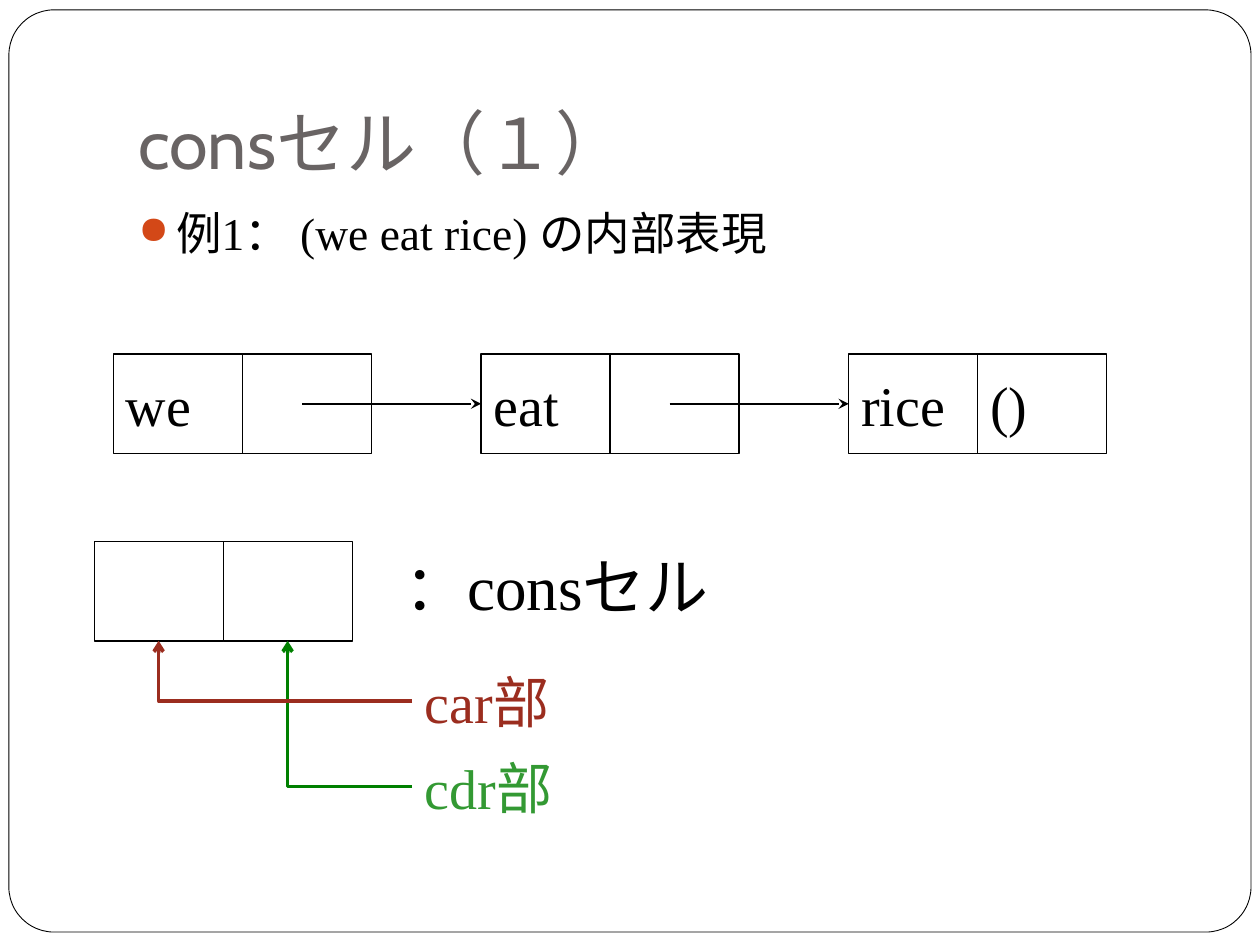
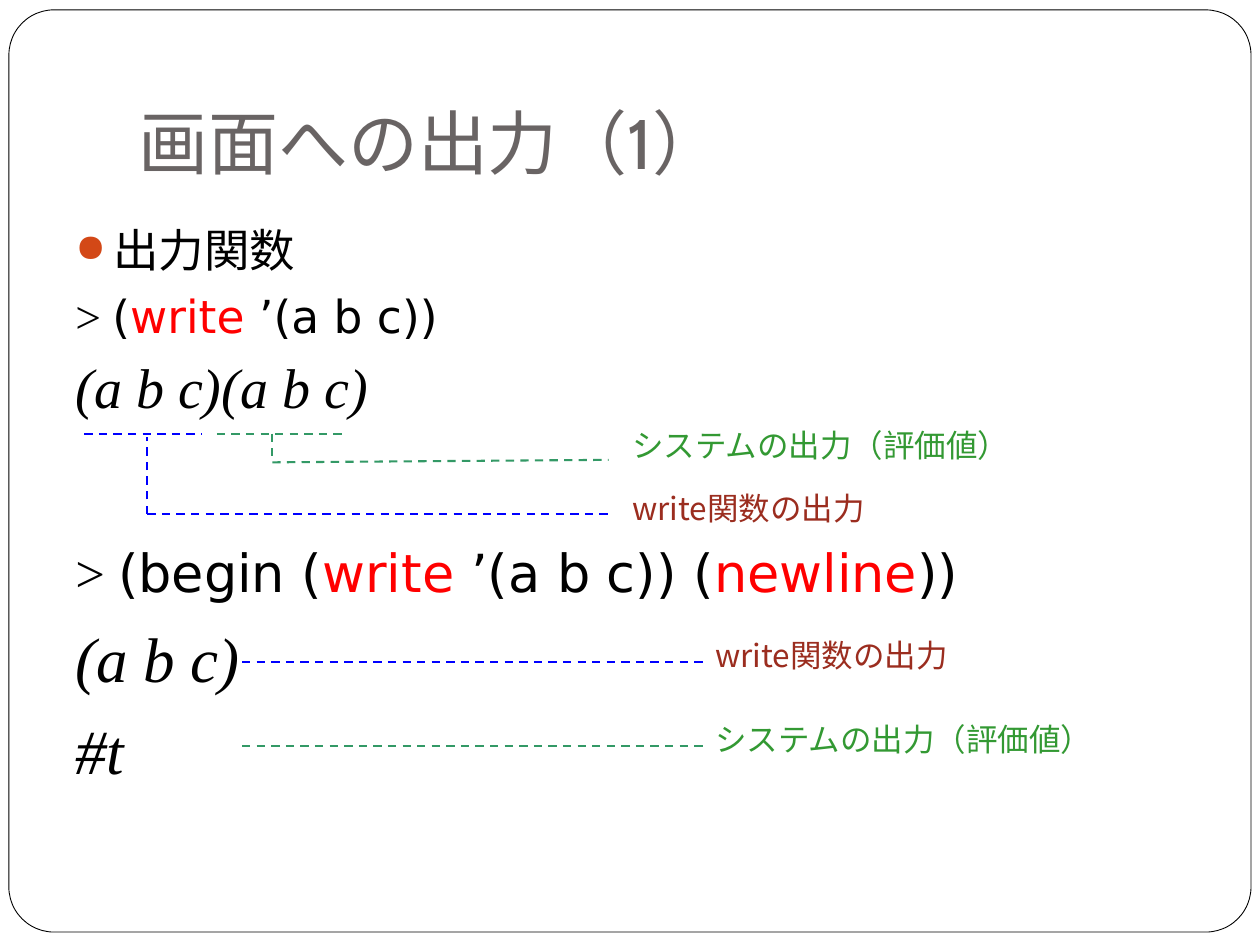
"""Build two Lisp lecture slides: cons cells and screen output."""
from dataclasses import dataclass

from lxml.etree import SubElement
from pptx import Presentation
from pptx.dml.color import RGBColor
from pptx.enum.dml import MSO_LINE
from pptx.enum.shapes import MSO_CONNECTOR, MSO_SHAPE
from pptx.enum.text import MSO_ANCHOR, MSO_AUTO_SIZE, PP_ALIGN
from pptx.oxml.ns import qn
from pptx.shapes.autoshape import Shape
from pptx.shapes.connector import Connector
from pptx.slide import Slide
from pptx.text.text import TextFrame
from pptx.util import Cm, Pt

COLORS = {
    "ink": "000000", "paper": "FFFFFF", "title": "696464", "bullet": "D34817",
    "car": "9B2D1F", "cdr": "339933", "cdr_arrow": "008000",
    "keyword": "FF0000", "written": "0000FF", "returned": "339966",
}
SERIF, CODE, GOTHIC, HEADING = "Times New Roman", "DejaVu Sans", "Noto Sans CJK JP", "Cabin"
CELL_WIDTH, CELL_HEIGHT = 2.6, 2.0
HANG = 0.76


@dataclass(frozen=True)
class Box:
    left: float
    top: float
    width: float
    height: float

    def emu(self) -> tuple[Cm, ...]:
        return tuple(Cm(v) for v in (self.left, self.top, self.width, self.height))


@dataclass(frozen=True)
class Trace:
    start: tuple[float, float]
    end: tuple[float, float]
    color: str


@dataclass(frozen=True)
class Caption:
    text: str
    box: Box
    color: str


def rgb(name: str) -> RGBColor:
    return RGBColor.from_string(COLORS[name])


def write(frame: TextFrame, text: str, *, size: float, font: str = SERIF,
          color: str = "ink", italic: bool = False) -> None:
    run = frame.paragraphs[-1].add_run()
    run.text = text
    run.font.name = font
    run.font.size = Pt(size)
    run.font.italic = italic
    run.font.color.rgb = rgb(color)
    SubElement(run.font._element, qn("a:ea"), typeface=GOTHIC)


def start_paragraph(frame: TextFrame, *, before: float = 0, spacing: float = 1,
                    hanging: bool = False, bullet: bool = False) -> None:
    paragraph = frame.paragraphs[-1]
    if paragraph.runs:
        paragraph = frame.add_paragraph()
    paragraph.space_before = Pt(before)
    paragraph.line_spacing = spacing
    properties = paragraph._p.get_or_add_pPr()
    if hanging:
        properties.set("marL", str(Cm(HANG)))
        properties.set("indent", str(-Cm(HANG)))
    if bullet:
        tint = SubElement(properties, qn("a:buClr"))
        SubElement(tint, qn("a:srgbClr"), val=COLORS["bullet"])
        SubElement(properties, qn("a:buSzPct"), val="85000")
        SubElement(properties, qn("a:buChar"), char="●")


def add_text_area(slide: Slide, box: Box, grow: bool = False) -> Shape:
    area = slide.shapes.add_textbox(*box.emu())
    area.text_frame.word_wrap = True
    area.text_frame.auto_size = MSO_AUTO_SIZE.SHAPE_TO_FIT_TEXT if grow else MSO_AUTO_SIZE.NONE
    return area


def add_label(slide: Slide, caption: Caption, size: float, font: str = SERIF) -> Shape:
    label = add_text_area(slide, caption.box, grow=True)
    write(label.text_frame, caption.text, size=size, font=font, color=caption.color)
    return label


def add_outline(slide: Slide, preset: MSO_SHAPE, box: Box, weight: float) -> Shape:
    outline = slide.shapes.add_shape(preset, *box.emu())
    outline.shadow.inherit = False
    outline.fill.background()
    outline.line.color.rgb = rgb("ink")
    outline.line.width = Pt(weight)
    return outline


def start_slide(deck: Presentation, heading: str) -> Slide:
    slide = deck.slides.add_slide(deck.slide_layouts[6])
    border = add_outline(slide, MSO_SHAPE.ROUNDED_RECTANGLE, Box(0.18, 0.2, 25.04, 18.59), 0.5)
    border.adjustments[0] = 0.049
    border.fill.solid()
    border.fill.fore_color.rgb = rgb("paper")
    title = add_text_area(slide, Box(2.54, 0.76, 21.59, 3.18)).text_frame
    title.vertical_anchor = MSO_ANCHOR.BOTTOM
    title.margin_bottom = Cm(0.25)
    write(title, heading, size=40, font=HEADING, color="title")
    return slide


def add_cons_cell(slide: Slide, left: float, top: float, *contents: str) -> list[Shape]:
    halves = []
    for column, content in enumerate(contents):
        box = Box(left + column * CELL_WIDTH, top, CELL_WIDTH, CELL_HEIGHT)
        half = add_outline(slide, MSO_SHAPE.FLOWCHART_PROCESS, box, 0.75)
        half.text_frame.vertical_anchor = MSO_ANCHOR.MIDDLE
        half.text_frame.paragraphs[0].alignment = PP_ALIGN.LEFT
        if content:
            write(half.text_frame, content, size=32)
        halves.append(half)
    return halves


def add_line(slide: Slide, trace: Trace, weight: float, *, head: str = "",
             dashed: bool = False, kind: MSO_CONNECTOR = MSO_CONNECTOR.STRAIGHT) -> Connector:
    ends = [Cm(v) for v in (*trace.start, *trace.end)]
    line = slide.shapes.add_connector(kind, *ends)
    line.line.color.rgb = rgb(trace.color)
    line.line.width = Pt(weight)
    if dashed:
        line.line.dash_style = MSO_LINE.DASH
    if head:
        SubElement(line.line._get_or_add_ln(), qn("a:tailEnd"), type=head)
    SubElement(line._element.spPr, qn("a:effectLst"))
    return line


def point_to_half(slide: Slide, label: Shape, half: Shape, color: str) -> None:
    pointer = add_line(slide, Trace((0, 0), (1, 1), color), 2, head="arrow",
                       kind=MSO_CONNECTOR.ELBOW)
    pointer.begin_connect(label, 1)
    pointer.end_connect(half, 2)
    pointer._element.spPr.find(qn("a:prstGeom")).set("prst", "bentConnector2")


def build_cons_slide(deck: Presentation) -> None:
    slide = start_slide(deck, "consセル（１）")
    example = add_text_area(slide, Box(2.54, 4.01, 21.59, 12.7)).text_frame
    start_paragraph(example, before=5.8, hanging=True, bullet=True)
    write(example, "例1： (we eat rice) の内部表現", size=26)

    first, step, top = 2.29, 7.41, 7.14
    words = ["we", "eat", "rice"]
    for index, word in enumerate(words):
        left = first + index * step
        last = index == len(words) - 1
        add_cons_cell(slide, left, top, word, "()" if last else "")
        if not last:
            middle = top + CELL_HEIGHT / 2
            link = Trace((left + 3.8, middle), (left + step, middle), "ink")
            add_line(slide, link, 1, head="stealth")

    car, cdr = add_cons_cell(slide, 1.9, 10.92, "", "")
    add_label(slide, Caption("：consセル", Box(7.9, 10.92, 15.6, 1.78), "ink"), 36)
    car_label = add_label(slide, Caption("car部", Box(8.31, 13.33, 3.6, 1.6), "car"), 32)
    cdr_label = add_label(slide, Caption("cdr部", Box(8.31, 15.06, 3.6, 1.6), "cdr"), 32)
    point_to_half(slide, cdr_label, cdr, "cdr_arrow")
    point_to_half(slide, car_label, car, "car")


def build_output_slide(deck: Presentation) -> None:
    slide = start_slide(deck, "画面への出力（1）")
    session = add_text_area(slide, Box(1.27, 4.45, 22.86, 5.92)).text_frame
    start_paragraph(session, before=5.8, spacing=0.93, hanging=True, bullet=True)
    write(session, "出力関数", size=26)
    start_paragraph(session, before=5.8, hanging=True)
    write(session, "> ", size=26)
    write(session, "(", size=26, font=CODE)
    write(session, "write", size=26, font=CODE, color="keyword")
    write(session, " ’(a b c))", size=26, font=CODE)
    start_paragraph(session, before=5.8, hanging=True)
    write(session, "(a b c)(a b c)", size=32, italic=True)

    sequence = add_text_area(slide, Box(1.27, 11, 19.25, 7.16), grow=True).text_frame
    start_paragraph(sequence, spacing=0.8)
    write(sequence, "> ", size=30)
    for code, color in (("(begin (", "ink"), ("write", "keyword"), (" ’(a b c)) (", "ink"),
                        ("newline", "keyword"), ("))", "ink")):
        write(sequence, code, size=30, font=CODE, color=color)
    for result in ("(a b c)", "#t"):
        start_paragraph(sequence, before=18, spacing=0.8)
        write(sequence, result, size=36, italic=True)

    for trace in (
        Trace((1.7, 8.74), (4.06, 8.74), "written"),
        Trace((4.37, 8.74), (6.91, 8.74), "returned"),
        Trace((2.97, 10.36), (2.97, 8.81), "written"),
        Trace((2.97, 10.36), (12.27, 10.36), "written"),
        Trace((5.49, 8.74), (5.49, 9.32), "returned"),
        Trace((5.49, 9.32), (12.27, 9.27), "returned"),
        Trace((4.88, 13.34), (14.17, 13.34), "written"),
        Trace((4.88, 15.03), (14.17, 15.03), "returned"),
    ):
        add_line(slide, trace, 1.2, dashed=True)

    for left, written_top, returned_top in ((12.5, 9.74, 8.47), (14.17, 12.7, 14.4)):
        written = Box(left, written_top, 6.55, 1.27)
        returned = Box(left, returned_top, 9.73, 1.27)
        add_label(slide, Caption("write関数の出力", written, "car"), 18, GOTHIC)
        add_label(slide, Caption("システムの出力（評価値）", returned, "cdr"), 18, GOTHIC)


def main() -> None:
    deck = Presentation()
    deck.slide_width, deck.slide_height = Cm(25.4), Cm(19.05)
    build_cons_slide(deck)
    build_output_slide(deck)
    deck.save("out.pptx")


if __name__ == "__main__":
    main()
